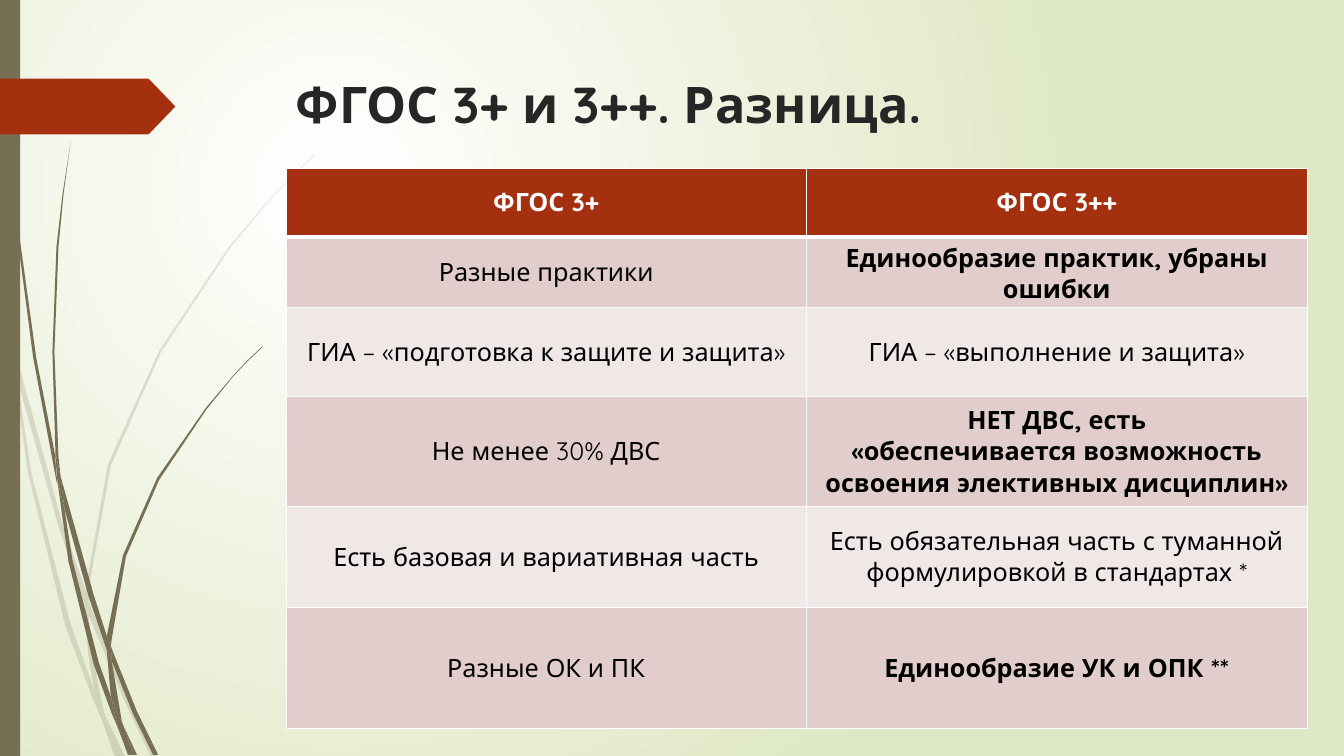
from lxml import etree
from pptx import Presentation
from pptx import util as u
from pptx.dml.color import RGBColor
from pptx.enum import shapes, text
from pptx.oxml.ns import qn

WHITE = RGBColor(0xFF, 0xFF, 0xFF)
BLACK = RGBColor(0, 0, 0)
INK = RGBColor(0x26, 0x26, 0x26)
PALE_GREEN = RGBColor(0xDF, 0xE8, 0xC4)
OLIVE = RGBColor(0x76, 0x6F, 0x54)
RUST = RGBColor(0xA5, 0x30, 0x10)
ROSE = RGBColor(0xE1, 0xCD, 0xCC)
LIGHT_ROSE = RGBColor(0xF0, 0xE8, 0xE7)
FONT = "Quicksand"

GRASS_UNIT = u.Cm(0.0254)
# Outlines of the grass blades: x, y, x, y ... in grass units
FAINT_GRASS = [
    (11, 350, 9, 322, 0, 282, 0, 299, 10, 344),
    (58, 522, 84, 599, 85, 586, 62, 520, 14, 345, 17, 376),
    (92, 607, 88, 596, 88, 610, 123, 694, 150, 751, 155, 751, 127, 692),
    (119, 751, 124, 751, 105, 711),
    (93, 683, 70, 619, 31, 469, 17, 376, 11, 350, 28, 470, 65, 621, 92, 693,
     101, 714, 99, 707),
    (84, 599, 87, 646, 93, 683, 96, 692, 105, 711, 103, 706, 91, 646, 88, 610),
    (88, 584, 110, 462, 160, 349, 229, 245, 268, 198, 290, 175, 312, 154, 312, 153,
     289, 175, 268, 197, 228, 244, 158, 348, 107, 461, 85, 584, 85, 586, 88, 596),
    (101, 714, 114, 751, 119, 751),
    (88, 608, 88, 610, 88, 596, 85, 586, 84, 599),
    (96, 692, 93, 683, 99, 707, 101, 714, 119, 751, 105, 711),
]
DARK_GRASS = [
    (7, 110, 17, 233, 33, 355, 56, 477, 57, 481, 55, 457, 55, 453, 36, 355, 19, 232,
     8, 109, 5, 48, 4, 0, 3, 0, 4, 48),
    (88, 592, 106, 645, 106, 631, 93, 590, 60, 472, 64, 505),
    (113, 649, 110, 641, 111, 656, 132, 708, 152, 749, 157, 749, 136, 706),
    (110, 691, 98, 657, 72, 556, 64, 505, 57, 477, 68, 557, 93, 659, 111, 708,
     117, 722, 116, 717),
    (60, 472, 58, 453, 54, 349, 58, 245, 63, 193, 70, 141, 62, 193,
     56, 245, 52, 349, 55, 449),
    (133, 749, 136, 749, 122, 719),
    (57, 477, 64, 505, 60, 472, 55, 449, 55, 453),
    (111, 633, 125, 552, 158, 476, 205, 406, 231, 374, 245, 359, 261, 344, 260, 344,
     245, 358, 231, 373, 204, 405, 156, 474, 122, 551, 106, 631, 110, 641),
    (117, 722, 127, 749, 131, 749),
    (106, 645, 110, 691, 116, 706, 122, 719, 121, 716, 111, 656, 109, 651),
    (106, 645, 109, 651, 111, 656, 110, 641, 106, 631),
    (116, 706, 110, 691, 116, 717, 117, 722, 130, 749, 133, 749, 122, 719),
]

COLUMN_WIDTHS = [u.Cm(13.11), u.Cm(12.62)]
ROW_HEIGHTS = [u.Cm(h) for h in (1.73, 1.73, 2.24, 2.77, 2.54, 3.05)]
ROWS = [
    ("ФГОС 3+", "ФГОС 3++"),
    ("Разные практики", "Единообразие практик, убраны ошибки"),
    ("ГИА – «подготовка к защите и защита»", "ГИА – «выполнение и защита»"),
    ("Не менее 30% ДВС",
     "НЕТ ДВС, есть\n«обеспечивается возможность освоения элективных дисциплин»"),
    ("Есть базовая и вариативная часть",
     "Есть обязательная часть с туманной формулировкой в стандартах *"),
    ("Разные ОК и ПК", "Единообразие УК и ОПК **"),
]
BOLD_CELLS = {(0, 0), (0, 1), (1, 1), (3, 1), (5, 1)}


def paint(shape, color, opacity=100):
    shape.shadow.inherit = False
    shape.fill.solid()
    shape.fill.fore_color.rgb = color
    shape.line.fill.background()
    if opacity < 100:
        tint = shape._element.spPr.find(qn("a:solidFill"))[0]
        etree.SubElement(tint, qn("a:alpha"), val=str(opacity * 1000))


def add_background(page):
    fill = page.background.fill
    fill.gradient()
    for stop, color in zip(fill.gradient_stops, (WHITE, PALE_GREEN)):
        stop.color.rgb = color
    gradient = page._element.find(".//" + qn("a:gradFill"))
    gradient.remove(gradient.find(qn("a:lin")))
    circle = etree.SubElement(gradient, qn("a:path"), {"path": "circle"})
    etree.SubElement(circle, qn("a:fillToRect"),
                     l="50000", t="50000", r="100000", b="100000")


def add_grass(page, left, top, blades, opacity):
    group = page.shapes.add_group_shape()
    for blade in blades:
        start, *rest = zip(blade[::2], blade[1::2])
        builder = group.shapes.build_freeform(*start, scale=GRASS_UNIT)
        builder.add_line_segments(rest, close=True)
        paint(builder.convert_to_shape(left, top), OLIVE, opacity)


def add_side_decor(page, left, top, height):
    add_grass(page, left, top, FAINT_GRASS, 20)
    add_grass(page, left, top, DARK_GRASS, 100)
    stripe = page.shapes.add_shape(
        shapes.MSO_SHAPE.RECTANGLE, left, top, u.Cm(0.51), height)
    paint(stripe, OLIVE)
    arrow = page.shapes.add_shape(
        shapes.MSO_SHAPE.PENTAGON, left, top + u.Cm(1.98), u.Cm(4.42), u.Cm(1.41))
    arrow.adjustments[0] = 0.48
    paint(arrow, RUST)


def format_text(frame, size, color, bold):
    for para in frame.paragraphs:
        for span in para.runs:
            span.font.name = FONT
            span.font.size = u.Pt(size)
            span.font.bold = bold
            span.font.color.rgb = color


def add_title(page, left, top, width, height):
    box = page.shapes.add_textbox(left, top, width, height)
    box.text_frame.word_wrap = True
    box.text_frame.text = "ФГОС 3+ и 3++. Разница."
    format_text(box.text_frame, 36, INK, True)


def add_borders(cell, row):
    top = 3 if row == 1 else 1
    bottom = 3 if row == 0 else 1
    sides = (("lnL", 1), ("lnR", 1), ("lnT", top), ("lnB", bottom))
    properties = cell._tc.get_or_add_tcPr()
    for index, (side, points) in enumerate(sides):
        line = etree.Element(qn("a:" + side), w=str(u.Pt(points)))
        fill = etree.SubElement(line, qn("a:solidFill"))
        etree.SubElement(fill, qn("a:srgbClr"), val=str(WHITE))
        properties.insert(index, line)


def add_comparison(page, left, top):
    table = page.shapes.add_table(
        len(ROWS), len(COLUMN_WIDTHS), left, top,
        sum(COLUMN_WIDTHS), sum(ROW_HEIGHTS)).table
    for column, width in zip(table.columns, COLUMN_WIDTHS):
        column.width = width
    for r, wording in enumerate(ROWS):
        table.rows[r].height = ROW_HEIGHTS[r]
        for c, words in enumerate(wording):
            cell = table.cell(r, c)
            cell.text_frame.text = words
            cell.vertical_anchor = text.MSO_ANCHOR.MIDDLE
            for para in cell.text_frame.paragraphs:
                para.alignment = text.PP_ALIGN.CENTER
            format_text(cell.text_frame, 18, BLACK if r else WHITE,
                        (r, c) in BOLD_CELLS)
            cell.fill.solid()
            cell.fill.fore_color.rgb = (
                RUST if r == 0 else ROSE if r % 2 else LIGHT_ROSE)
            add_borders(cell, r)


def main():
    deck = Presentation()
    deck.slide_width, deck.slide_height = u.Cm(33.87), u.Cm(19.05)
    page = deck.slides.add_slide(deck.slide_layouts[6])
    add_background(page)
    add_side_decor(page, u.Cm(0), u.Cm(0), deck.slide_height)
    add_title(page, u.Cm(7.21), u.Cm(1.73), u.Cm(24.77), u.Cm(3.56))
    add_comparison(page, u.Cm(7.21), u.Cm(4.24))
    deck.save("out.pptx")


if __name__ == "__main__":
    main()
